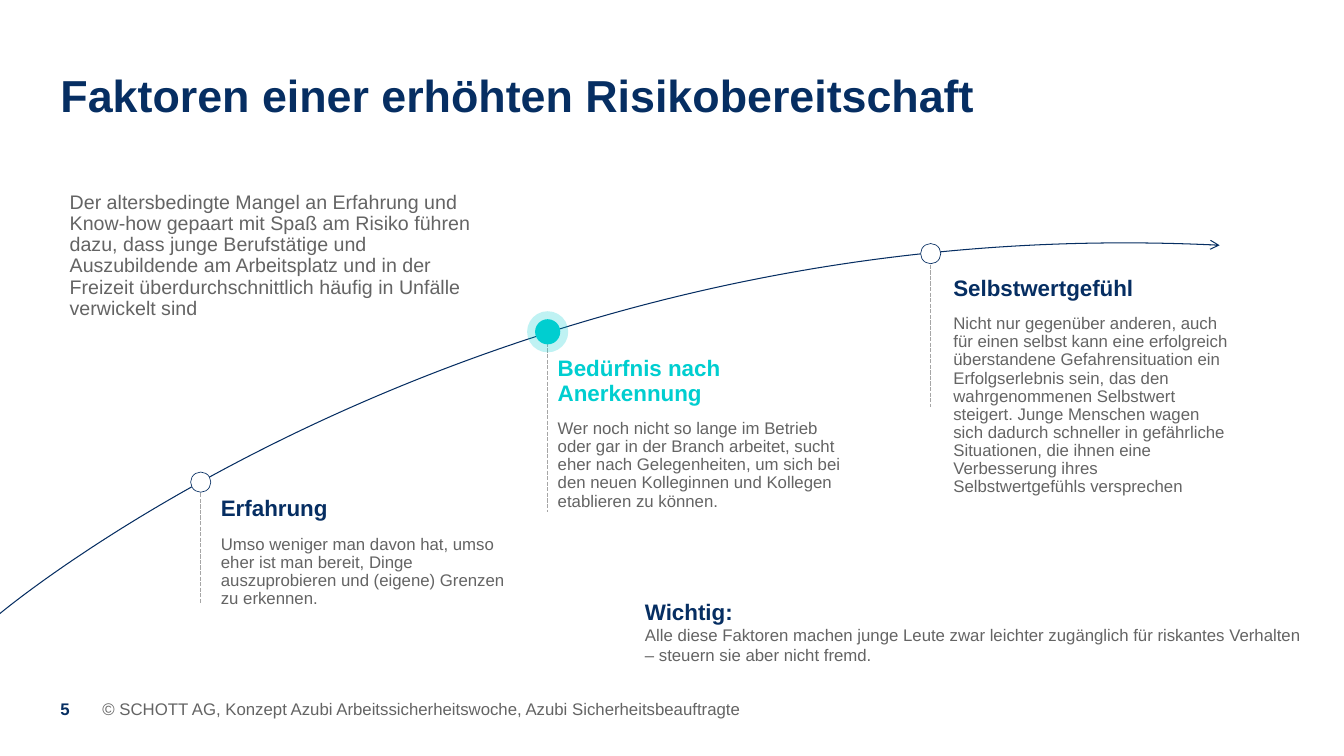
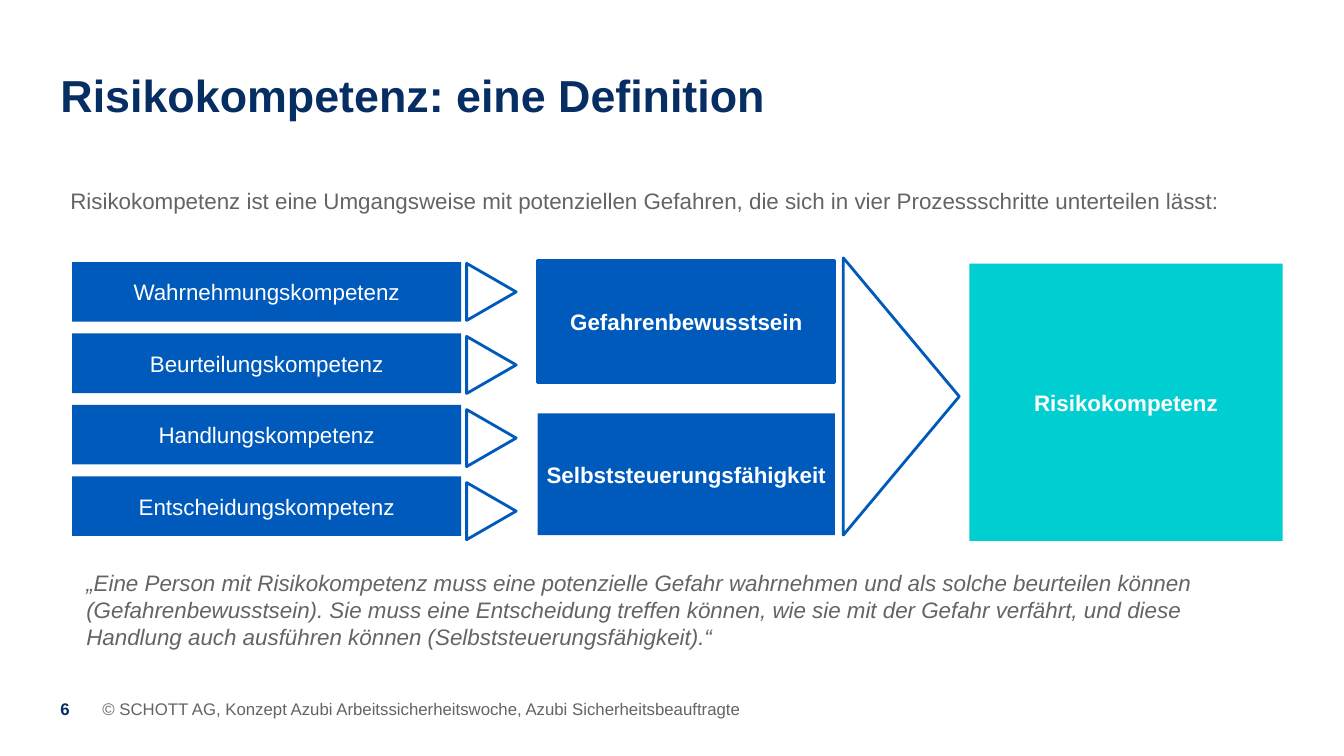
from lxml.etree import SubElement
from pptx import Presentation
from pptx.dml.color import RGBColor
from pptx.enum.dml import MSO_LINE
from pptx.enum.shapes import MSO_CONNECTOR, MSO_SHAPE
from pptx.enum.text import MSO_ANCHOR, PP_ALIGN
from pptx.oxml.ns import qn
from pptx.util import Emu, Inches, Pt

# Shared look: a grid of 160 columns by 90 rows with square cells
CELL = Inches(1) // 12
NAVY, BLUE, CYAN = "062E62", "005ABB", "00CED0"
GREY, DASH_GREY, WHITE = "646464", "A6A6A6", "FFFFFF"
FONT = "Arial"
FOOTER = "© SCHOTT AG, Konzept Azubi Arbeitssicherheitswoche, Azubi Sicherheitsbeauftragte"
colour = RGBColor.from_string


def place(page, area, kind=None, fill=None, line=None, weight=1):
    """Put a preset shape, or a text box without a kind, on the grid."""
    area = [Emu(round(cells * CELL)) for cells in area]
    if kind is None:
        return page.shapes.add_textbox(*area)
    shape = page.shapes.add_shape(kind, *area)
    shape.shadow.inherit = False
    if fill:
        shape.fill.solid()
        shape.fill.fore_color.rgb = colour(fill)
    else:
        shape.fill.background()
    if line:
        shape.line.color.rgb = colour(line)
        shape.line.width = Pt(weight)
    else:
        shape.line.fill.background()
    return shape


def write(box, paragraphs, inset=0, anchor=MSO_ANCHOR.TOP, align=PP_ALIGN.LEFT,
          spacing=None, after=0):
    """Fill a box with (text, size, colour, style) paragraphs."""
    frame = box.text_frame
    frame.word_wrap = True
    frame.vertical_anchor = anchor
    frame.margin_left = frame.margin_right = Inches(inset)
    frame.margin_top = frame.margin_bottom = Inches(inset / 2)
    frame.text = "\n".join(text for text, *_ in paragraphs)
    for para, (_, size, ink, style) in zip(frame.paragraphs, paragraphs):
        para.alignment = align
        para.line_spacing = spacing
        para.space_after = Pt(after)
        for span in para.runs:
            span.font.name = FONT
            span.font.size = Pt(size)
            span.font.color.rgb = colour(ink)
            span.font.bold = style == "bold"
            span.font.italic = style == "italic"


deck = Presentation()
deck.slide_width, deck.slide_height = 160 * CELL, 90 * CELL

# Title, page number and footer of every slide
pages = []
titles = ["Faktoren einer erhöhten Risikobereitschaft", "Risikokompetenz: eine Definition"]
for number, title in enumerate(titles, start=5):
    page = deck.slides.add_slide(deck.slide_layouts[6])
    write(place(page, (7.2, 4.2, 145.6, 10.4)), [(title, 32, NAVY, "bold")],
          anchor=MSO_ANCHOR.BOTTOM, spacing=0.9)
    write(place(page, (7.2, 83.2, 3.7, 2.4)), [(str(number), 12, NAVY, "bold")])
    write(place(page, (12.2, 83.2, 85, 2.4)), [(FOOTER, 12, GREY, "")])
    pages.append(page)
factors_page, definition_page = pages

# Slide 1: rising curve, one cubic segment with an arrowhead
curve_points = [(-0.2, 73.2), (-0.2, 73.2), (57, 24.8), (145.2, 29.2)]
start, *controls = [(round(x * CELL), round(y * CELL)) for x, y in curve_points]
builder = factors_page.shapes.build_freeform(*start)
builder.add_line_segments(controls, close=False)
curve = builder.convert_to_shape()
curve.shadow.inherit = False
curve.fill.background()
curve.line.color.rgb = colour(NAVY)
curve.line.width = Pt(0.75)
SubElement(curve.line._get_or_add_ln(), qn("a:tailEnd"), type="arrow")
outline = next(curve._element.iter(qn("a:path")))
bezier = SubElement(outline, qn("a:cubicBezTo"))
for segment in outline.findall(qn("a:lnTo")):
    bezier.append(segment[0])
    outline.remove(segment)

# Factors: marker centre, end of the dashed line, text area, heading, text
factors = [
    (23.9, 57.4, 71.8, (26.3, 56.2, 33.8, 16.2), NAVY, "Erfahrung",
     "Umso weniger man davon hat, umso eher ist man bereit, Dinge auszuprobieren und "
     "(eigene) Grenzen zu erkennen."),
    (65.2, 39.5, 61, (66.4, 38.5, 33.8, 22.3), CYAN, "Bedürfnis nach Anerkennung",
     "Wer noch nicht so lange im Betrieb oder gar in der Branch arbeitet, sucht eher nach "
     "Gelegenheiten, um sich bei den neuen Kolleginnen und Kollegen etablieren zu können."),
    (110.8, 30.2, 48.4, (113.5, 37.1, 32.8, 22), NAVY, "Selbstwertgefühl",
     "Nicht nur gegenüber anderen, auch für einen selbst kann eine erfolgreich überstandene "
     "Gefahrensituation ein Erfolgserlebnis sein, das den wahrgenommenen Selbstwert steigert. "
     "Junge Menschen wagen sich dadurch schneller in gefährliche Situationen, die ihnen eine "
     "Verbesserung ihres Selbstwertgefühls versprechen"),
]
for x, y, line_end, text_area, accent, heading, text in factors:
    ends = [Emu(round(cells * CELL)) for cells in (x, y, x, line_end)]
    drop = factors_page.shapes.add_connector(MSO_CONNECTOR.STRAIGHT, *ends)
    drop.line.color.rgb = colour(DASH_GREY)
    drop.line.width = Pt(1)
    drop.line.dash_style = MSO_LINE.SQUARE_DOT
    SubElement(drop._element.spPr, qn("a:effectLst"))

    # The highlighted factor gets a dot with a halo, the others an open ring
    if accent == CYAN:
        rings = [(4.9, CYAN, None), (3, CYAN, None)]
    else:
        rings = [(2.4, WHITE, NAVY)]
    for size, fill, line in rings:
        ring = place(factors_page, (x - size / 2, y - size / 2, size, size),
                     MSO_SHAPE.OVAL, fill, line, 0.48)
        if size == 4.9:
            halo_colour = next(ring._element.spPr.iter(qn("a:srgbClr")))
            SubElement(halo_colour, qn("a:alpha"), val="25000")
    write(place(factors_page, text_area),
          [(heading, 16, accent, "bold"), (text, 12, GREY, "")],
          anchor=MSO_ANCHOR.BOTTOM, spacing=0.9, after=10)

# Introduction and closing remark
write(place(factors_page, (8.3, 22.9, 49.4, 19.3)), [(
    "Der altersbedingte Mangel an Erfahrung und Know-how gepaart mit Spaß am Risiko führen "
    "dazu, dass junge Berufstätige und Auszubildende am Arbeitsplatz und in der Freizeit "
    "überdurchschnittlich häufig in Unfälle verwickelt sind", 14, GREY, "")], spacing=0.9)
write(place(factors_page, (75.6, 70.6, 82.1, 9.2)), [
    ("Wichtig:", 16, NAVY, "bold"),
    ("Alle diese Faktoren machen junge Leute zwar leichter zugänglich für riskantes "
     "Verhalten – steuern sie aber nicht fremd.", 12, GREY, "")], inset=0.1)

# Slide 2: introduction and quotation
write(place(definition_page, (7.2, 21.7, 140.6, 4.4)), [(
    "Risikokompetenz ist eine Umgangsweise mit potenziellen Gefahren, die sich in vier "
    "Prozessschritte unterteilen lässt:", 16, GREY, "")], inset=0.1)
write(place(definition_page, (9.1, 67.2, 140.6, 10.9)), [(
    "„Eine Person mit Risikokompetenz muss eine potenzielle Gefahr wahrnehmen und als solche "
    "beurteilen können (Gefahrenbewusstsein). Sie muss eine Entscheidung treffen können, wie "
    "sie mit der Gefahr verfährt, und diese Handlung auch ausführen können "
    "(Selbststeuerungsfähigkeit).“", 16, GREY, "italic")], inset=0.1)

# Four steps lead to two abilities and one result
steps = ["Wahrnehmungskompetenz", "Beurteilungskompetenz",
         "Handlungskompetenz", "Entscheidungskompetenz"]
blocks = [((8.6, 31.2 + 8.5 * row, 46.3, 7.1), BLUE, None, step, "")
          for row, step in enumerate(steps)]
blocks += [
    ((64, 31, 35.4, 14.5), BLUE, BLUE, "Gefahrenbewusstsein", "bold"),
    ((64, 49.2, 35.4, 14.5), BLUE, None, "Selbststeuerungsfähigkeit", "bold"),
    ((115.4, 31.4, 37.3, 33), CYAN, None, "Risikokompetenz", "bold"),
]
for area, fill, line, label, style in blocks:
    block = place(definition_page, area, MSO_SHAPE.RECTANGLE, fill, line, 2.25)
    write(block, [(label, 16, WHITE, style)], inset=0.04,
          anchor=MSO_ANCHOR.MIDDLE, align=PP_ALIGN.CENTER)

# Triangles pointing right: centre, base and height
triangles = [(58.5, 34.75 + 8.7 * row, 6.8, 5.9) for row in range(len(steps))]
triangles.append((107.3, 47.2, 33, 13.8))
for x, y, base, height in triangles:
    triangle = place(definition_page, (x - base / 2, y - height / 2, base, height),
                     MSO_SHAPE.ISOSCELES_TRIANGLE, line=BLUE, weight=2)
    triangle.rotation = 90

deck.save("out.pptx")
